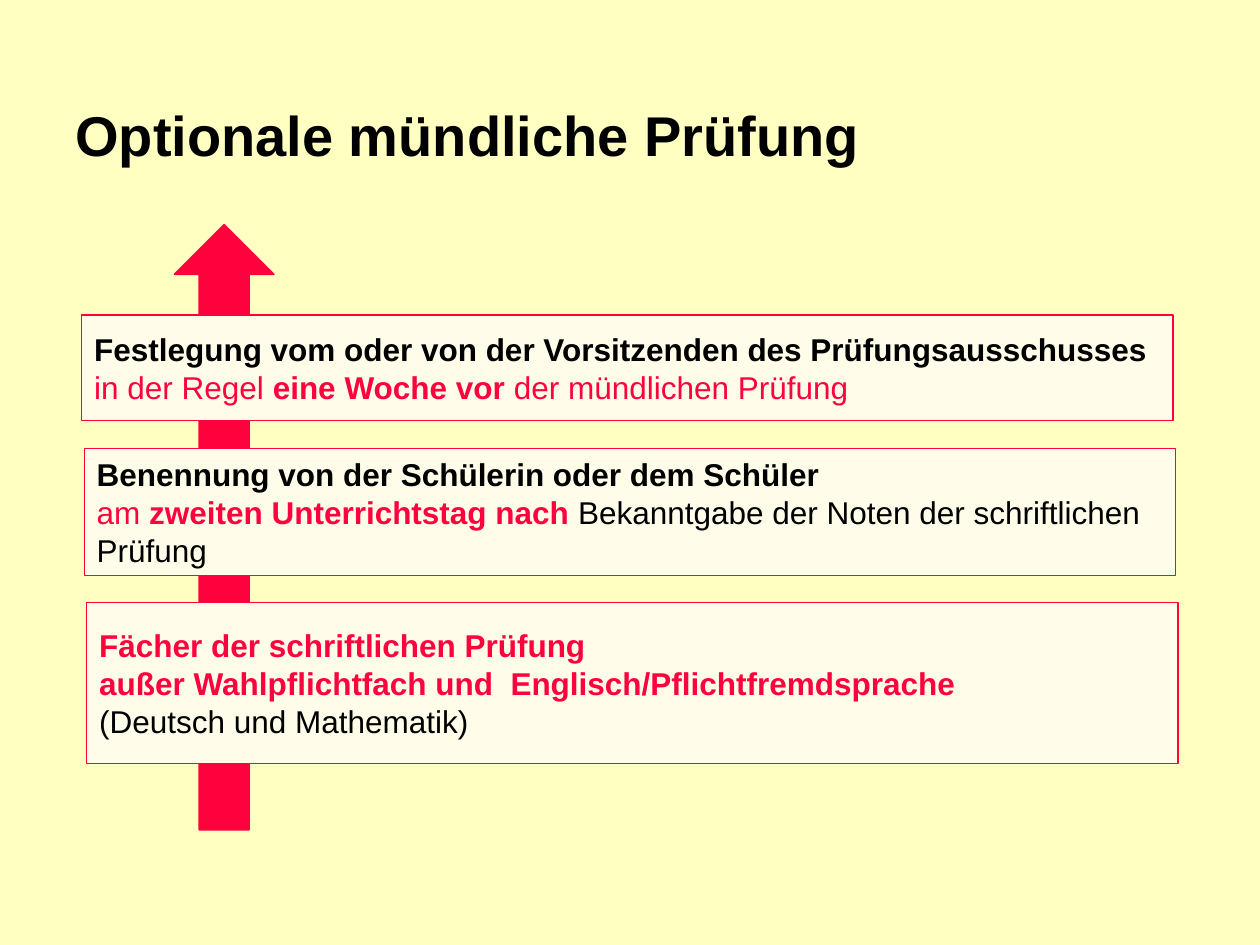
"""Build the slide on the optional oral examination."""
from pptx import Presentation, util as u
from pptx.dml.color import RGBColor
from pptx.enum import shapes, text

COLORS = {"bg": "FFFFC1", "box": "FFFDE9", "red": "FE023E", "black": "000000"}
TITLE = [[("Optionale mündliche Prüfung", "black", True)]]
BOXES = [
    (1.75, 12.14, 3.25, [
        [("Fächer der schriftlichen Prüfung", "red", True)],
        [("außer Wahlpflichtfach und  Englisch/Pflichtfremdsprache", "red", True)],
        [("(Deutsch und Mathematik)", "black", False)],
    ]),
    (1.7, 9.04, 2.57, [
        [("Benennung von der Schülerin oder dem Schüler", "black", True)],
        [("am ", "red", False), ("zweiten Unterrichtstag nach ", "red", True),
         ("Bekanntgabe der Noten der schriftlichen Prüfung", "black", False)],
    ]),
    (1.65, 6.35, 2.13, [
        [("Festlegung vom oder von der Vorsitzenden des Prüfungsausschusses", "black", True)],
        [("in der Regel ", "red", False), ("eine Woche vor ", "red", True),
         ("der mündlichen Prüfung", "red", False)],
    ]),
]
BOX_WIDTH = 22


def color(name):
    return RGBColor.from_string(COLORS[name])


def style(font, name, bold):
    font.bold = bold
    font.color.rgb = color(name)


def write(sp, paragraphs, size):
    tf = sp.text_frame
    tf.word_wrap = True
    tf.vertical_anchor = text.MSO_ANCHOR.MIDDLE
    for i, runs in enumerate(paragraphs):
        p = tf.add_paragraph() if i else tf.paragraphs[0]
        p.alignment = text.PP_ALIGN.LEFT
        p.font.name = "Arial"
        p.font.size = u.Pt(size)
        if len(runs) == 1:
            style(p.font, *runs[0][1:])
        for words, name, bold in runs:
            r = p.add_run()
            r.text = words
            if len(runs) > 1:
                style(r.font, name, bold)
            elif sp.shape_type != shapes.MSO_SHAPE_TYPE.TEXT_BOX:
                r.font.color.rgb = color(name)


def add_shape(s, kind, box, fill, line_width):
    sp = s.shapes.add_shape(kind, *map(u.Cm, box))
    sp.shadow.inherit = False
    sp.fill.solid()
    sp.fill.fore_color.rgb = color(fill)
    sp.line.color.rgb = color("red")
    sp.line.width = u.Pt(line_width)
    return sp


def main():
    prs = Presentation()
    prs.slide_width, prs.slide_height = u.Cm(25.4), u.Cm(19.05)
    s = prs.slides.add_slide(prs.slide_layouts[6])
    s.background.fill.solid()
    s.background.fill.fore_color.rgb = color("bg")

    add_shape(s, shapes.MSO_SHAPE.UP_ARROW, (3.52, 4.53, 2, 12.2), "red", 1)
    for left, top, height, paragraphs in BOXES:
        sp = add_shape(s, shapes.MSO_SHAPE.RECTANGLE, (left, top, BOX_WIDTH, height), "box", 0.75)
        write(sp, paragraphs, 18)
    write(s.shapes.add_textbox(*map(u.Cm, (1.27, 1.6, 22.86, 2.21))), TITLE, 32)
    prs.save("out.pptx")


if __name__ == "__main__":
    main()
